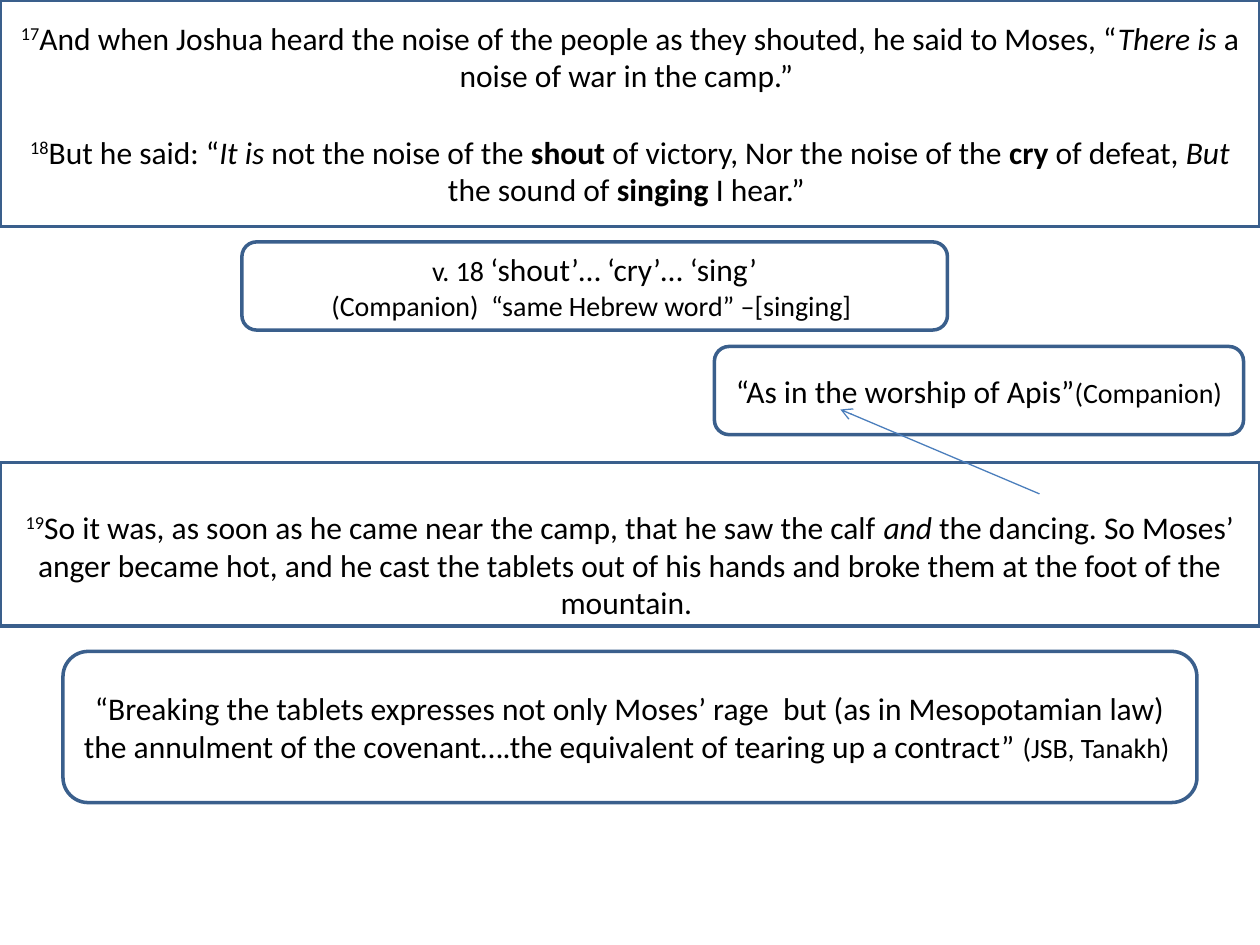
from dataclasses import dataclass

from lxml import etree
from pptx import Presentation
from pptx.dml.color import RGBColor
from pptx.enum.shapes import MSO_CONNECTOR, MSO_SHAPE
from pptx.enum.text import MSO_ANCHOR, PP_ALIGN
from pptx.oxml.ns import qn
from pptx.util import Inches, Pt

RECT = MSO_SHAPE.RECTANGLE
ROUND = MSO_SHAPE.ROUNDED_RECTANGLE
STRAIGHT = MSO_CONNECTOR.STRAIGHT
MIDDLE = MSO_ANCHOR.MIDDLE
CENTER = PP_ALIGN.CENTER

FONT = "Calibri"
INK, PAPER, EDGE, ARROW = "000000", "FFFFFF", "3A5F8C", "4B7EBC"


@dataclass
class Span:
    text: str
    size: int = 18
    bold: bool = False
    italic: bool = False
    raised: bool = False


@dataclass
class Box:
    kind: int
    left: float
    top: float
    width: float
    height: float
    paras: list[list[Span]]
    gap: float = 0
    inset: tuple[float, float] = (0.05, 0.05)


def verse(num: str) -> Span:
    return Span(num, raised=True)


def bold(text: str) -> Span:
    return Span(text, bold=True)


def ital(text: str) -> Span:
    return Span(text, italic=True)


def small(text: str) -> Span:
    return Span(text, size=16)


BOXES = [
    Box(RECT, 0, 0, 10, 1.8, [
        [verse("17"),
         Span("And when Joshua heard the noise of the people as they shouted, "
              "he said to Moses, “"),
         ital("There is"), Span(" a noise of war in the camp.” ")],
        [verse("18"), Span("But he said: “"), ital("It is"),
         Span(" not the noise of the "), bold("shout "),
         Span("of victory, Nor the noise of the"), bold(" cry "),
         Span("of defeat, "), ital("But"), Span(" the sound of "),
         bold("singing "), Span("I hear.” ")],
    ], gap=22),
    Box(RECT, 0, 3.67, 10, 1.3, [
        [verse("19"),
         Span("So it was, as soon as he came near the camp, "
              "that he saw the calf "),
         ital("and"),
         Span(" the dancing. So Moses’ anger became hot, and he cast the "
              "tablets out of his hands and broke them at the foot of the "
              "mountain. ")],
    ], inset=(0.36, 0.04)),
    Box(ROUND, 1.92, 1.92, 5.6, 0.7, [
        [small("v. 18 "), Span("‘shout’…"), small(" "),
         Span("‘cry’… ‘sing’")],
        [small("(Companion)  “same Hebrew word” –[singing] ")],
    ]),
    Box(ROUND, 5.67, 2.75, 4.2, 0.7, [
        [Span("“As in the worship of Apis”"), small("(Companion)")],
    ]),
    Box(ROUND, 0.5, 5.17, 9, 1.2, [
        [Span("“Breaking the tablets expresses not only Moses’ rage  but "
              "(as in Mesopotamian law) the annulment of the covenant….the "
              "equivalent of tearing up a contract” "),
         small("(JSB, Tanakh) ")],
    ]),
]


def paint(target, color: str) -> None:
    """Give a fill, or the fill of a line or font, one solid colour."""
    target.solid()
    target.fore_color.rgb = RGBColor.from_string(color)


def add_span(para, span: Span) -> None:
    run = para.add_run()
    run.text = span.text
    font = run.font
    font.name, font.size = FONT, Pt(span.size)
    font.bold, font.italic = span.bold, span.italic
    paint(font.fill, INK)
    if span.raised:
        run._r.get_or_add_rPr().set("baseline", "30000")


def add_box(slide, box: Box) -> None:
    shape = slide.shapes.add_shape(
        box.kind, Inches(box.left), Inches(box.top),
        Inches(box.width), Inches(box.height))
    shape.shadow.inherit = False
    paint(shape.fill, PAPER)
    paint(shape.line.fill, EDGE)
    shape.line.width = Pt(2)
    frame = shape.text_frame
    frame.word_wrap = True
    frame.vertical_anchor = MIDDLE
    frame.margin_top, frame.margin_bottom = map(Inches, box.inset)
    for i, spans in enumerate(box.paras):
        para = frame.add_paragraph() if i else frame.paragraphs[0]
        para.alignment = CENTER
        if i:
            para.space_before = Pt(box.gap)
        for span in spans:
            add_span(para, span)


def add_arrow(slide, x1: float, y1: float, x2: float, y2: float) -> None:
    link = slide.shapes.add_connector(
        STRAIGHT, Inches(x1), Inches(y1), Inches(x2), Inches(y2))
    paint(link.line.fill, ARROW)
    link.line.width = Pt(0.75)
    etree.SubElement(link.line._get_or_add_ln(), qn("a:tailEnd"), type="arrow")
    etree.SubElement(link._element.spPr, qn("a:effectLst"))


def main() -> None:
    deck = Presentation()
    deck.slide_width, deck.slide_height = Inches(10), Inches(7.5)
    slide = deck.slides.add_slide(deck.slide_layouts[6])
    for box in BOXES:
        add_box(slide, box)
    add_arrow(slide, 8.25, 3.92, 6.67, 3.25)
    deck.save("out.pptx")


if __name__ == "__main__":
    main()
